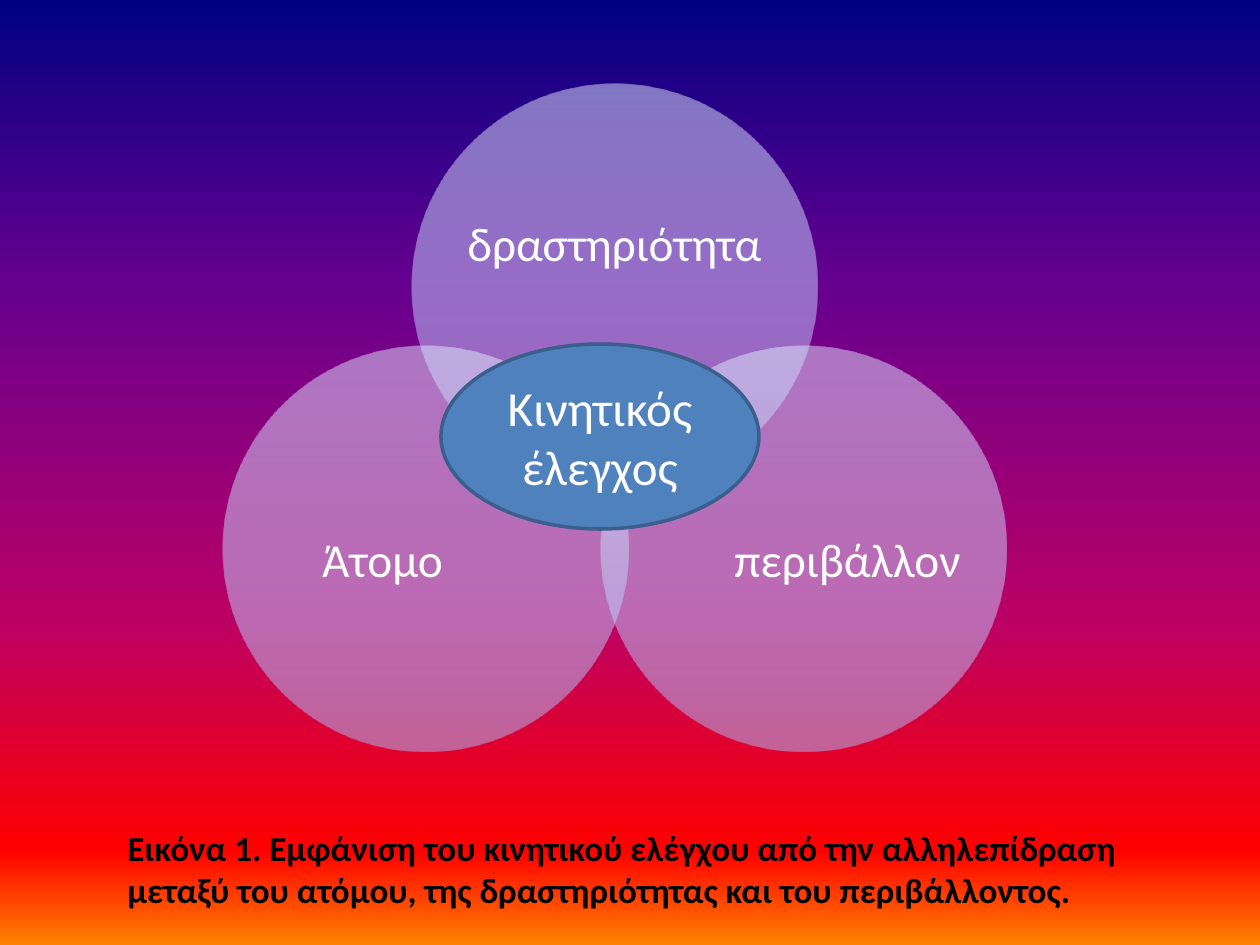
from dataclasses import dataclass
from lxml.etree import SubElement
from pptx import Presentation
from pptx.dml.color import RGBColor as Rgb
from pptx.enum.shapes import MSO_SHAPE as Form
from pptx.enum.text import MSO_ANCHOR as Anchor, PP_ALIGN as Align
from pptx.oxml.ns import qn
from pptx.util import Pt

SCALE = 914400 / 126


@dataclass(frozen=True)
class Theme:
    font: str = "Calibri"
    white: str = "FFFFFF"
    black: str = "000000"
    core: str = "4F81BD"
    edge: str = "3A5F8C"
    sky: tuple = ((0, "000082"), (30, "66008F"), (65, "BA0066"),
                  (90, "FF0000"), (100, "FF8200"))
    glass: tuple = ((0, "A4C4FF"), (35, "BFD4FF"), (100, "E6EEFF"))
    label: int = 27
    focus: int = 28
    note: int = 20


THEME = Theme()


def px(*sizes):
    return [round(size * SCALE) for size in sizes]


def blend(fill, root, stops, angle, alpha=100):
    fill.gradient()
    grad = root.find(".//" + qn("a:gradFill"))
    ramp = grad.find(qn("a:gsLst"))
    for stop in list(ramp):
        ramp.remove(stop)
    for place, color in stops:
        stop = SubElement(ramp, qn("a:gs"), pos=str(place * 1000))
        tint = SubElement(stop, qn("a:srgbClr"), val=color)
        if alpha < 100:
            SubElement(tint, qn("a:alpha"), val=str(alpha * 1000))
    grad.find(qn("a:lin")).set("ang", str(angle * 60000))


def write(shape, text, size, color, align=Align.CENTER, bold=False):
    frame = shape.text_frame
    frame.word_wrap = True
    frame.text = text
    for para in frame.paragraphs:
        para.alignment = align
        for run in para.runs:
            run.font.name = THEME.font
            run.font.size = Pt(size)
            run.font.bold = bold
            run.font.color.rgb = Rgb.from_string(color)
    return frame


def oval(shapes, box):
    shape = shapes.add_shape(Form.OVAL, *px(*box))
    shape.shadow.inherit = False
    return shape


def label(shapes, box, text):
    area = shapes.add_textbox(*px(*box))
    frame = write(area, text, THEME.label, THEME.white)
    frame.margin_left = frame.margin_right = 0
    frame.margin_top = frame.margin_bottom = 0
    frame.vertical_anchor = Anchor.MIDDLE
    frame.paragraphs[0].line_spacing = 0.9
    frame.paragraphs[0].space_after = Pt(9)


def venn(slide, box):
    left, top, width, height = box
    size = 406
    right, low = width - size, height - size
    sets = (
        ("δραστηριότητα", right // 2, 0, (54, 71, 297, 183)),
        ("περιβάλλον", right, low, (125, 105, 243, 223)),
        ("Άτομο", 0, low, (38, 105, 243, 223)),
    )
    shapes = slide.shapes.add_group_shape().shapes
    for text, dx, dy, (inx, iny, wide, high) in sets:
        x, y = left + dx, top + dy
        disc = oval(shapes, (x, y, size, size))
        blend(disc.fill, disc._element, THEME.glass, 270, 50)
        disc.line.fill.background()
        label(shapes, (x + inx, y + iny, wide, high), text)


def center(slide, box):
    core = oval(slide.shapes, box)
    core.fill.solid()
    core.fill.fore_color.rgb = Rgb.from_string(THEME.core)
    core.line.color.rgb = Rgb.from_string(THEME.edge)
    core.line.width = Pt(2)
    frame = write(core, "Κινητικός έλεγχος", THEME.focus, THEME.white)
    frame.vertical_anchor = Anchor.MIDDLE


def caption(slide, box):
    text = ("Εικόνα 1. Εµφάνιση του κινητικού ελέγχου από την αλληλεπίδραση\n"
            "µεταξύ του ατόµου, της δραστηριότητας και του περιβάλλοντος.")
    area = slide.shapes.add_textbox(*px(*box))
    write(area, text, THEME.note, THEME.black, Align.LEFT, True)


def main():
    deck = Presentation()
    deck.slide_width, deck.slide_height = px(1260, 945)
    slide = deck.slides.add_slide(deck.slide_layouts[6])
    blend(slide.background.fill, slide._element, THEME.sky, 90)
    venn(slide, (223, 84, 784, 668))
    center(slide, (441, 344, 318, 185))
    caption(slide, (115, 820, 1081, 97))
    deck.save("out.pptx")


if __name__ == "__main__":
    main()
